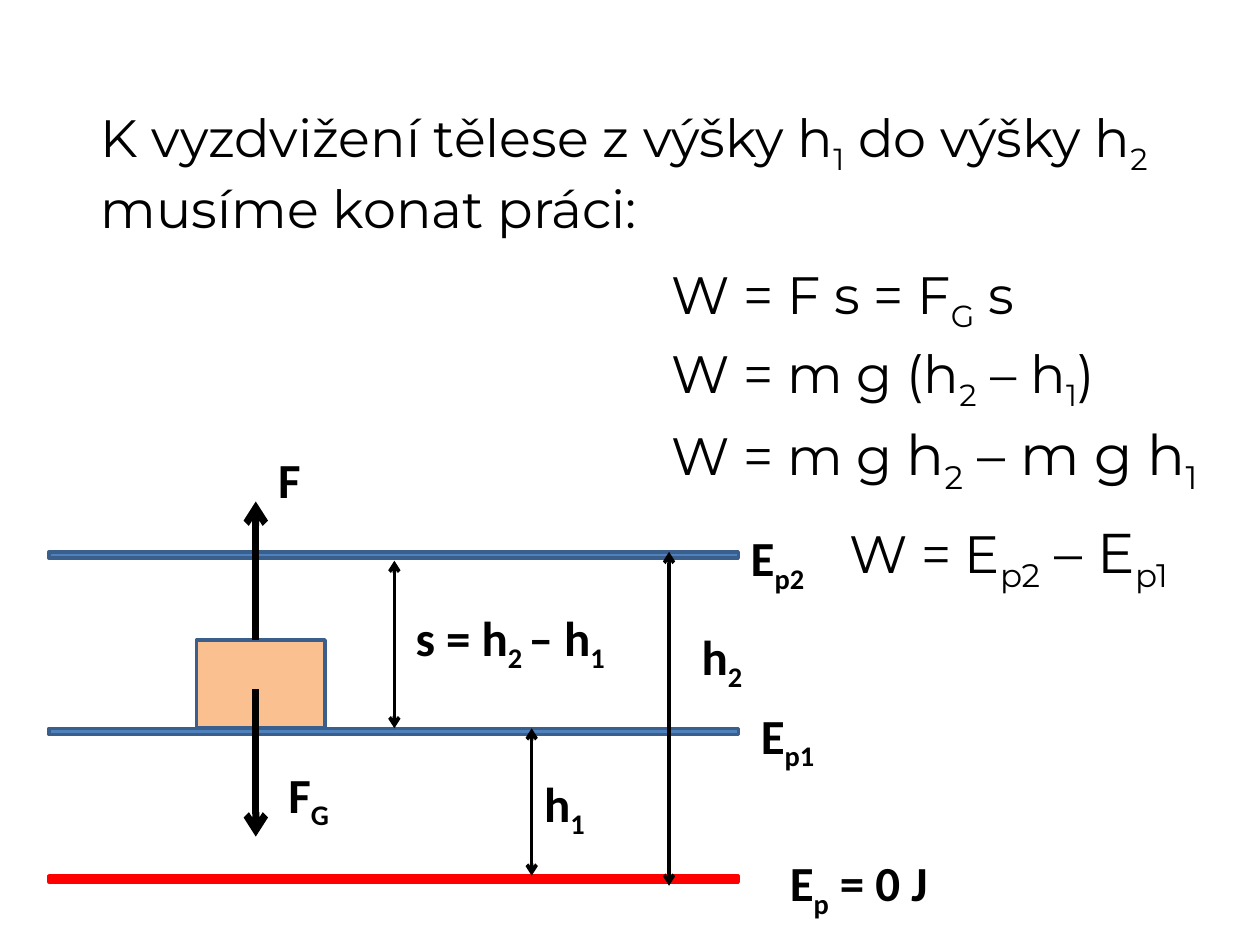
from lxml import etree
from pptx import Presentation
from pptx import util as u
from pptx.dml.color import RGBColor
from pptx.enum import shapes, text
from pptx.oxml import ns

BLACK = RGBColor(0x00, 0x00, 0x00)
BLUE = RGBColor(0x4F, 0x81, 0xBD)
DARK_BLUE = RGBColor(0x3A, 0x5F, 0x8C)
ORANGE = RGBColor(0xFA, 0xC0, 0x90)
RED = RGBColor(0xFF, 0x00, 0x00)


class Board:
    """Holds the style and the current slide."""

    formula_font, label_font = "Montserrat", "Calibri"
    formula_size, large_size, label_size = 30, 32, 28
    line_width = 2

    def __init__(self, page):
        self.page = page

    def add_spans(self, para, markup, font, size, bold=False):
        """Add runs; every second piece between bars is a subscript."""
        for number, piece in enumerate(markup.split("|")):
            if not piece:
                continue
            span = para.add_run()
            span.text = piece
            span.font.name = font
            span.font.size = u.Pt(size)
            span.font.bold = bold
            span.font.color.rgb = BLACK
            if number % 2:
                span._r.get_or_add_rPr().set("baseline", "-25000")

    def title(self, markup, left, top, width, height):
        box = self.page.shapes.title
        box.left, box.top = u.Inches(left), u.Inches(top)
        box.width, box.height = u.Inches(width), u.Inches(height)
        frame = box.text_frame
        frame.word_wrap = True
        frame.auto_size = text.MSO_AUTO_SIZE.NONE
        frame.vertical_anchor = text.MSO_ANCHOR.TOP
        para = frame.paragraphs[0]
        para.alignment = text.PP_ALIGN.LEFT
        self.add_spans(para, markup, self.formula_font, self.formula_size)

    def text_box(self, left, top, width, height):
        box = self.page.shapes.add_textbox(
            u.Inches(left), u.Inches(top), u.Inches(width), u.Inches(height))
        box.text_frame.word_wrap = True
        return box.text_frame.paragraphs[0]

    def formula(self, left, top, width, height, markup, large_markup=""):
        para = self.text_box(left, top, width, height)
        self.add_spans(para, markup, self.formula_font, self.formula_size)
        self.add_spans(para, large_markup, self.formula_font, self.large_size)

    def label(self, markup, left, top, width=0.86):
        para = self.text_box(left, top, width, 0.57)
        self.add_spans(para, markup, self.label_font, self.label_size, bold=True)

    def block(self, left, top, width, height, fill, line):
        shape = self.page.shapes.add_shape(
            shapes.MSO_SHAPE.RECTANGLE,
            u.Inches(left), u.Inches(top), u.Inches(width), u.Inches(height))
        shape.shadow.inherit = False
        shape.fill.solid()
        shape.fill.fore_color.rgb = fill
        shape.line.color.rgb = line
        shape.line.width = u.Pt(self.line_width)

    def arrow(self, x, start, end, width=line_width, both_ends=True):
        line = self.page.shapes.add_connector(
            shapes.MSO_CONNECTOR.STRAIGHT,
            u.Inches(x), u.Inches(start), u.Inches(x), u.Inches(end))
        line.line.color.rgb = BLACK
        line.line.width = u.Pt(width)
        outline = line.line._get_or_add_ln()
        for tag in ("a:headEnd", "a:tailEnd") if both_ends else ("a:tailEnd",):
            etree.SubElement(outline, ns.qn(tag), type="arrow")
        etree.SubElement(line._element.spPr, ns.qn("a:effectLst"))


def main():
    deck = Presentation()
    deck.slide_width, deck.slide_height = u.Inches(10), u.Inches(7.5)
    board = Board(deck.slides.add_slide(deck.slide_layouts[5]))

    board.title("K vyzdvižení tělese z výšky h|1| do výšky h|2| musíme konat práci:",
                0.7, 0.78, 9, 1.56)

    # Energy levels
    upper, lower, ground = 4.38, 5.78, 6.95
    for level, fill, line in ((upper, BLUE, DARK_BLUE),
                              (lower, BLUE, DARK_BLUE),
                              (ground, RED, RED)):
        board.block(0.39, level, 5.47, 0.05, fill, line)
    board.label("E|p2", 5.86, 4.14, 2.19)
    board.label("E|p1", 5.94, 5.55, 2.19)
    board.label("E|p| = 0 J", 6.17, 6.72, 2.19)

    # Heights
    board.arrow(5.31, upper, 7.03)
    board.label("h|2", 5.47, 4.92)
    board.arrow(4.22, lower, ground)
    board.label("h|1", 4.22, 6.09)
    board.arrow(3.13, 4.45, lower)
    board.label("s = h|2 |– h|1", 3.2, 4.77, 1.95)

    # Lifted body and its forces
    body_top = 5.08
    board.block(1.56, body_top, 1.02, lower - body_top, ORANGE, DARK_BLUE)
    board.arrow(2.03, 5.47, 6.64, width=4, both_ends=False)
    board.label("F|G", 2.19, 6.02)
    board.arrow(2.03, body_top, 3.98, width=4, both_ends=False)
    board.label("F", 2.11, 3.52)

    # Derivation of the work
    board.formula(5.23, 2.03, 3.44, 0.7, "W = F s = F|G| s")
    board.formula(5.23, 2.66, 3.98, 0.61, "W = m g (h|2| – h|1|)")
    board.formula(5.23, 3.28, 5, 0.7, "W = m g ", "h|2| – m g h|1")
    board.formula(6.64, 4.06, 3.36, 0.94, "W = E", "|p2| – E|p1")

    deck.save("out.pptx")


if __name__ == "__main__":
    main()
